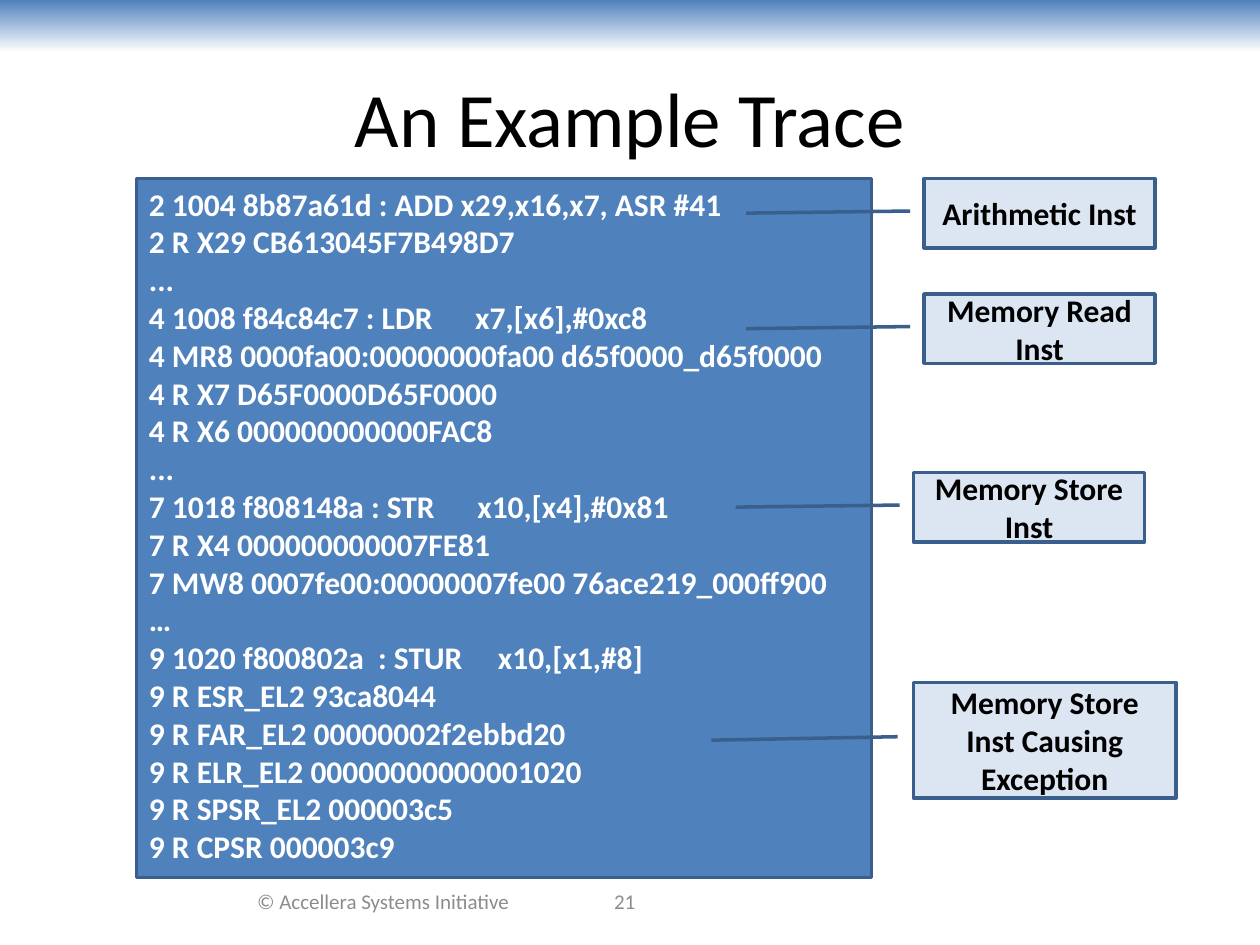
from dataclasses import dataclass

from pptx import Presentation, util as u
from pptx.dml.color import RGBColor
from pptx.enum import shapes, text


@dataclass(frozen=True)
class Theme:
    font: str = "Calibri"
    blue: str = "4F81BD"
    edge: str = "3A5F8C"
    pale: str = "DCE6F2"
    white: str = "FFFFFF"
    black: str = "000000"
    grey: str = "8C8C8C"
    title_size: int = 44
    body_size: int = 18
    footer_size: int = 12
    line_width: int = 2


COLS, ROWS = 120, 90
POINTER = (0.47, -0.06, 0.5, -0.77)  # start y, x and end y, x as shares of the box

TRACE = """2 1004 8b87a61d : ADD x29,x16,x7, ASR #41
2 R X29 CB613045F7B498D7
...
4 1008 f84c84c7 : LDR      x7,[x6],#0xc8
4 MR8 0000fa00:00000000fa00 d65f0000_d65f0000
4 R X7 D65F0000D65F0000
4 R X6 000000000000FAC8
...
7 1018 f808148a : STR      x10,[x4],#0x81
7 R X4 000000000007FE81
7 MW8 0007fe00:00000007fe00 76ace219_000ff900
…
9 1020 f800802a  : STUR     x10,[x1,#8]
9 R ESR_EL2 93ca8044
9 R FAR_EL2 00000002f2ebbd20
9 R ELR_EL2 00000000000001020
9 R SPSR_EL2 000003c5
9 R CPSR 000003c9"""

# Label and its column, row, width, height
CALLOUTS = [
    ("Arithmetic Inst", (88, 17, 22, 6.6)),
    ("Memory Read Inst", (88, 28, 22, 6.6)),
    ("Memory Store Inst", (87, 45, 22, 6.6)),
    ("Memory Store Inst Causing Exception", (87, 65, 25, 11)),
]


class SlideBuilder:
    def __init__(self, prs, theme):
        self.theme = theme
        self.s = prs.slides.add_slide(prs.slide_layouts[6])
        self.col = prs.slide_width / COLS
        self.row = prs.slide_height / ROWS

    def place(self, box):
        x, y, w, h = box
        return (round(x * self.col), round(y * self.row),
                round(w * self.col), round(h * self.row))

    def set_text(self, sp, content, size, color, bold=False,
                 align=text.PP_ALIGN.CENTER, anchor=text.MSO_ANCHOR.MIDDLE):
        tf = sp.text_frame
        tf.text = content
        tf.word_wrap = True
        tf.vertical_anchor = anchor
        for p in tf.paragraphs:
            p.alignment = align
            for r in p.runs:
                r.font.name = self.theme.font
                r.font.size = u.Pt(size)
                r.font.bold = bold
                r.font.color.rgb = RGBColor.from_string(color)

    def label(self, content, box, size, color):
        sp = self.s.shapes.add_textbox(*self.place(box))
        self.set_text(sp, content, size, color)

    def shape(self, kind, box, fill):
        sp = self.s.shapes.add_shape(kind, *self.place(box))
        sp.shadow.inherit = False
        sp.fill.solid()
        sp.fill.fore_color.rgb = RGBColor.from_string(fill)
        sp.line.color.rgb = RGBColor.from_string(self.theme.edge)
        sp.line.width = u.Pt(self.theme.line_width)
        return sp

    def band(self, box):
        sp = self.shape(shapes.MSO_SHAPE.RECTANGLE, box, self.theme.blue)
        sp.line.fill.background()
        sp.fill.gradient()
        sp.fill.gradient_angle = 270  # counter-clockwise, so top to bottom
        for stop, color in zip(sp.fill.gradient_stops, (self.theme.blue, self.theme.white)):
            stop.color.rgb = RGBColor.from_string(color)

    def code(self, content, box):
        sp = self.shape(shapes.MSO_SHAPE.RECTANGLE, box, self.theme.blue)
        self.set_text(sp, content, self.theme.body_size, self.theme.white, True,
                      text.PP_ALIGN.LEFT, text.MSO_ANCHOR.TOP)
        sp.text_frame.auto_size = text.MSO_AUTO_SIZE.SHAPE_TO_FIT_TEXT

    def callout(self, content, box):
        sp = self.shape(shapes.MSO_SHAPE.LINE_CALLOUT_1, box, self.theme.pale)
        for i, share in enumerate(POINTER):
            sp.adjustments[i] = share
        self.set_text(sp, content, self.theme.body_size, self.theme.black, True)


def main():
    prs = Presentation()
    prs.slide_width, prs.slide_height = u.Inches(10), u.Inches(7.5)
    theme = Theme()
    slide = SlideBuilder(prs, theme)

    # Header band and title
    slide.band((0, 0, COLS, 5))
    slide.label("An Example Trace", (6, 3.6, 108, 15), theme.title_size, theme.black)

    # Footer
    for content, col, width in (("© Accellera Systems Initiative", 22, 29), ("21", 48, 23)):
        slide.label(content, (col, 83.4, width, 4.8), theme.footer_size, theme.grey)

    # Trace listing and the callouts that explain it
    slide.code(TRACE, (13, 17, 70, 66.6))
    for content, box in CALLOUTS:
        slide.callout(content, box)

    prs.save("out.pptx")


if __name__ == "__main__":
    main()
